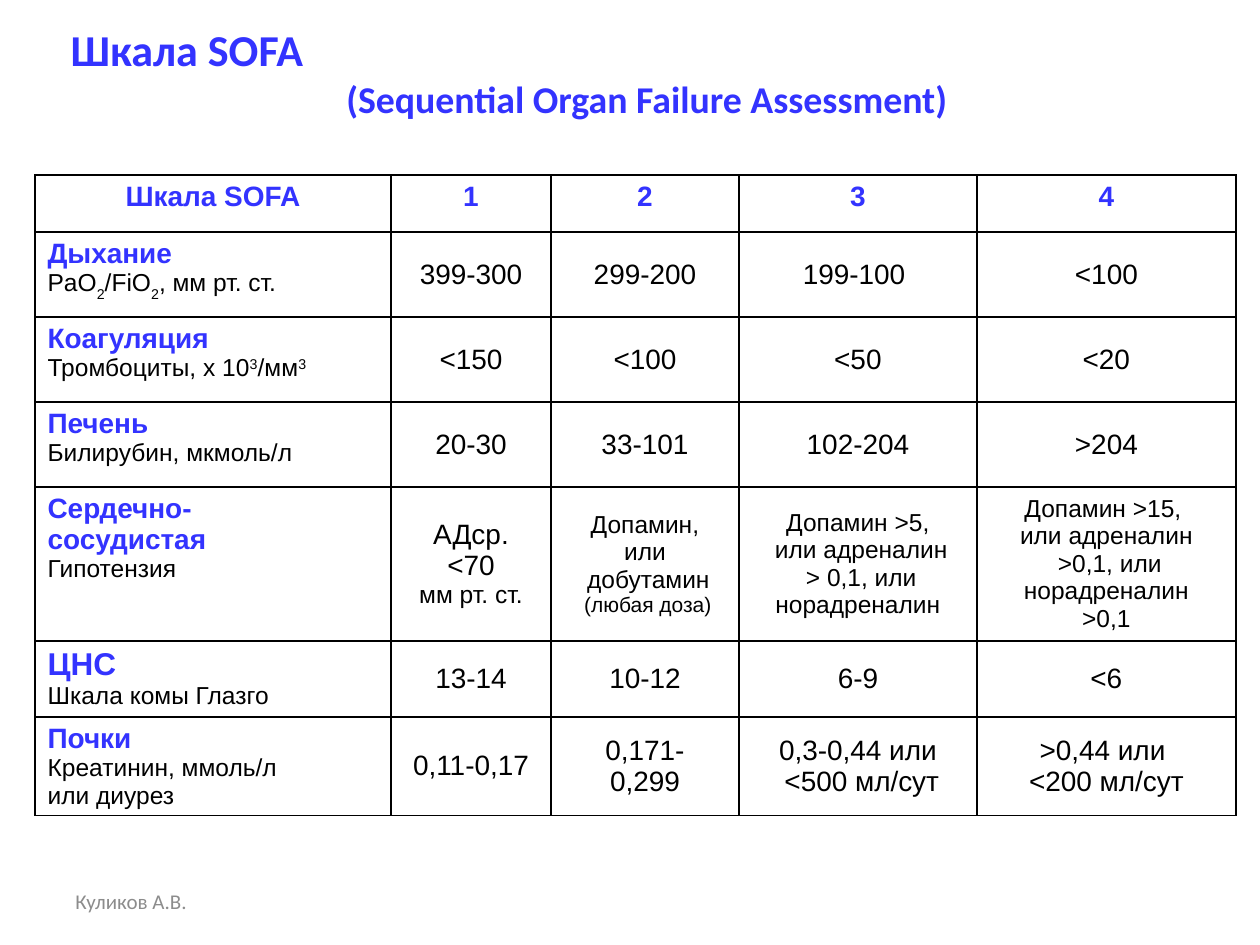
from lxml import etree
from pptx import Presentation
from pptx.dml.color import RGBColor
from pptx.enum.text import MSO_ANCHOR, PP_ALIGN
from pptx.oxml.ns import qn
from pptx.util import Inches, Pt

LEFT, CENTER = PP_ALIGN.LEFT, PP_ALIGN.CENTER
TOP, MIDDLE = MSO_ANCHOR.TOP, MSO_ANCHOR.MIDDLE
PX = Inches(1) / 126
BLUE, BLACK, GRAY, WHITE = "3333FF", "000000", "8C8C8C", "FFFFFF"


def write(paragraph, text, size=16, color=BLACK, bold=False, font="Arial",
          align=LEFT, baseline=0):
    paragraph.alignment = align
    run = paragraph.add_run()
    run.text = text
    run.font.size = Pt(size)
    run.font.name = font
    run.font.bold = bold
    run.font.color.rgb = RGBColor.from_string(color)
    if baseline:
        run.font._element.set("baseline", str(baseline * 1000))


def format_cell(cell, anchor):
    cell.vertical_anchor = anchor
    properties = cell._tc.get_or_add_tcPr()
    for side in ("a:lnL", "a:lnR", "a:lnT", "a:lnB"):
        line = etree.SubElement(properties, qn(side), w=str(Pt(1)))
        fill = etree.SubElement(line, qn("a:solidFill"))
        etree.SubElement(fill, qn("a:srgbClr"), val=BLACK)
    cell.fill.solid()
    cell.fill.fore_color.rgb = RGBColor.from_string(WHITE)


presentation = Presentation()
presentation.slide_width = Inches(10)
presentation.slide_height = Inches(7.5)
slide = presentation.slides.add_slide(presentation.slide_layouts[5])

# Title: scale name on the left, its full form centred below
title = slide.shapes.title
title.left, title.top, title.width, title.height = (
    round(value * PX) for value in (25, 38, 1211, 68))
title_frame = title.text_frame
title_frame.vertical_anchor = MIDDLE
name_line = title_frame.paragraphs[0]
name_line._p.get_or_add_pPr().set("marL", str(round(33 * PX)))
write(name_line, "Шкала SOFA", size=25.2, color=BLUE, bold=True, font="Calibri")
write(title_frame.add_paragraph(), "(Sequential Organ Failure Assessment)",
      size=21.6, color=BLUE, bold=True, font="Calibri", align=CENTER)

# Score table
headers = ["Шкала SOFA", "1", "2", "3", "4"]
# Each row: organ system lines, heading size, measure lines, scores.
# A measure line is a list of (text, baseline shift in percent).
rows = [
    (["Дыхание"], 16,
     [[("PaO", 0), ("2", -30), ("/FiO", 0), ("2", -30), (", мм рт. ст.", 0)]],
     ["399-300", "299-200", "199-100 ", "<100"]),
    (["Коагуляция"], 16,
     [[("Тромбоциты, х 10", 0), ("3", 30), ("/мм", 0), ("3", 30)]],
     ["<150", "<100", "<50", "<20"]),
    (["Печень"], 16, [[("Билирубин, мкмоль/л", 0)]],
     ["20-30", "33-101", "102-204", ">204"]),
    (["Сердечно-", "сосудистая"], 16, [[("Гипотензия", 0)]],
     [[("АДср.", 16), ("<70", 16), ("мм рт. ст.", 14)],
      [("Допамин,", 14), ("или", 14), (" добутамин", 14), (" (любая доза)", 12)],
      [("Допамин >5,", 14), (" или адреналин", 14), (" > 0,1, или", 14),
       (" норадреналин ", 14)],
      [("Допамин >15, ", 14), ("или адреналин", 14), (" >0,1, или", 14),
       (" норадреналин ", 14), (">0,1", 14)]]),
    (["ЦНС"], 18, [[("Шкала комы Глазго", 0)]],
     ["13-14", "10-12", "6-9", "<6"]),
    (["Почки"], 16, [[("Креатинин, ммоль/л", 0)], [("или диурез", 0)]],
     ["0,11-0,17", [("0,171-", 16), ("0,299", 16)],
      [("0,3-0,44 или", 16), (" <500 мл/сут", 16)],
      [(">0,44 или ", 16), ("<200 мл/сут", 16)]]),
]
column_widths = [356, 160, 188, 238, 259]
row_heights = [57, 85, 85, 85, 154, 76, 98]

table = slide.shapes.add_table(
    len(row_heights), len(column_widths), round(35 * PX), round(175 * PX),
    round(sum(column_widths) * PX), round(sum(row_heights) * PX)).table
table.horz_banding = False
for column, width in zip(table.columns, column_widths):
    column.width = round(width * PX)
for row, height in zip(table.rows, row_heights):
    row.height = round(height * PX)

# Header row
for column_index, header in enumerate(headers):
    cell = table.cell(0, column_index)
    format_cell(cell, TOP)
    write(cell.text_frame.paragraphs[0], header, color=BLUE, bold=True, align=CENTER)

# Organ systems and their scores
for row_index, (systems, system_size, measures, scores) in enumerate(rows, start=1):
    cell = table.cell(row_index, 0)
    format_cell(cell, TOP)
    paragraph = cell.text_frame.paragraphs[0]
    for line_index, system in enumerate(systems):
        if line_index:
            paragraph = cell.text_frame.add_paragraph()
        write(paragraph, system, size=system_size, color=BLUE, bold=True)
    for measure in measures:
        paragraph = cell.text_frame.add_paragraph()
        for text, baseline in measure:
            write(paragraph, text, size=14, baseline=baseline)

    for column_index, score in enumerate(scores, start=1):
        cell = table.cell(row_index, column_index)
        format_cell(cell, MIDDLE)
        lines = [(score, 16)] if isinstance(score, str) else score
        paragraph = cell.text_frame.paragraphs[0]
        for line_index, (text, size) in enumerate(lines):
            if line_index:
                paragraph = cell.text_frame.add_paragraph()
            write(paragraph, text, size=size, align=CENTER)

# Author line
author = slide.shapes.add_textbox(*(round(value * PX) for value in (63, 876, 294, 50)))
author.text_frame.word_wrap = True
author.text_frame.vertical_anchor = MIDDLE
write(author.text_frame.paragraphs[0], "Куликов А.В.", size=12, color=GRAY, font="Calibri")

presentation.save("out.pptx")
